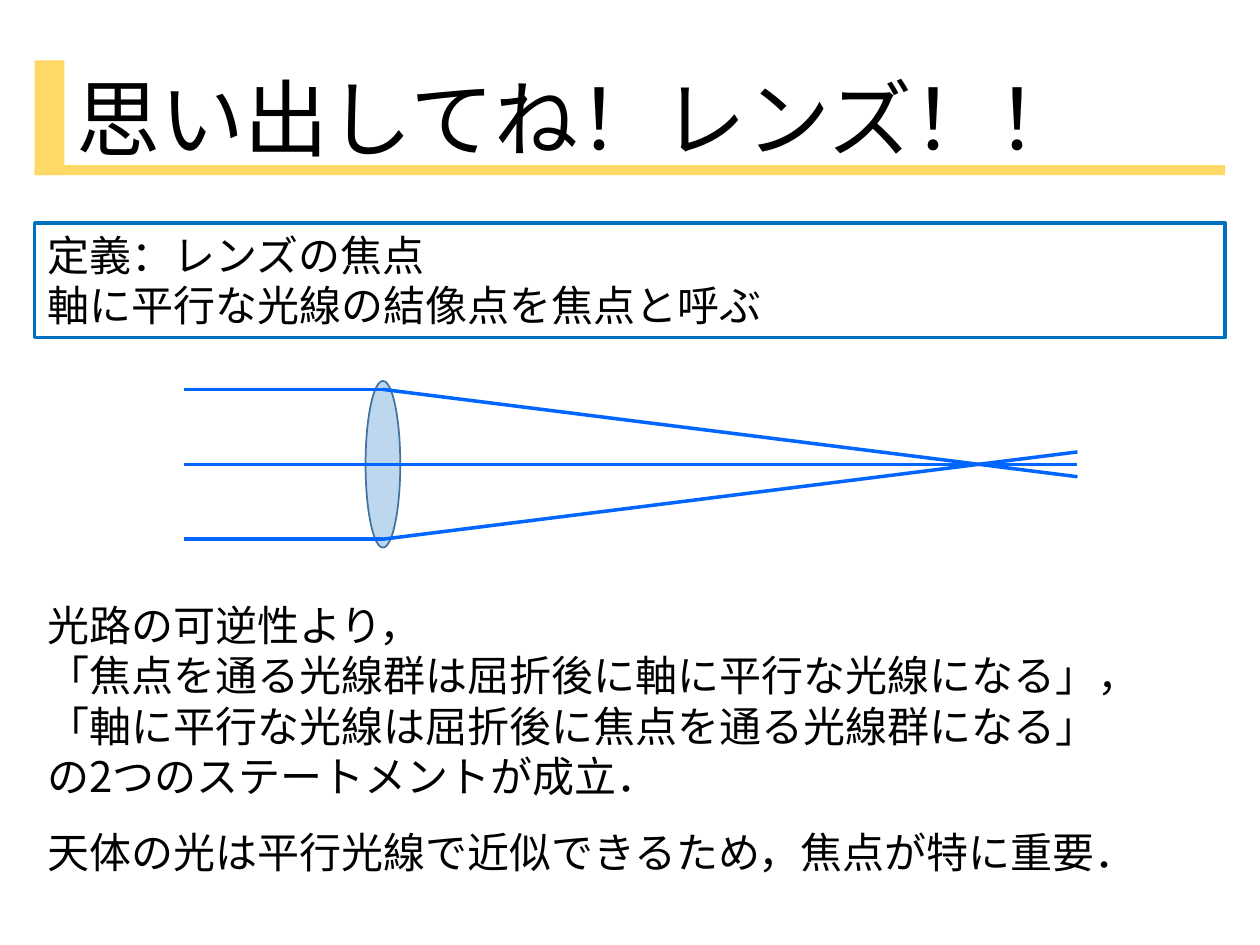
from dataclasses import dataclass

from lxml import etree
from pptx import Presentation
from pptx.dml.color import RGBColor
from pptx.enum.shapes import MSO_CONNECTOR, MSO_SHAPE
from pptx.enum.text import MSO_ANCHOR, PP_ALIGN
from pptx.oxml.ns import qn
from pptx.util import Cm, Pt

RECT = MSO_SHAPE.RECTANGLE
OVAL = MSO_SHAPE.OVAL
STRAIGHT = MSO_CONNECTOR.STRAIGHT
LEFT = PP_ALIGN.LEFT
TOP = MSO_ANCHOR.TOP


@dataclass(frozen=True)
class Theme:
    font: str = "Noto Sans CJK JP"
    ink: str = "000000"
    gold: str = "FFD966"
    frame: str = "0070C0"
    glass: str = "BDD7EE"
    rim: str = "43739E"
    ray: str = "0066FF"
    title: int = 48
    body: int = 24


class Page:
    def __init__(self, slide, theme):
        self.shapes = slide.shapes
        self.theme = theme

    def fill_text(self, frame, lines, size, wrap):
        frame.word_wrap = wrap
        frame.vertical_anchor = TOP
        for i, line in enumerate(lines):
            para = frame.paragraphs[0] if i == 0 else frame.add_paragraph()
            para.text = line
            para.alignment = LEFT
            font = para.font
            font.size = Pt(size)
            font.color.rgb = RGBColor.from_string(self.theme.ink)
            font.name = self.theme.font
            props = para._p.pPr.find(qn("a:defRPr"))
            etree.SubElement(props, qn("a:ea"), typeface=self.theme.font)

    def text(self, box, lines, size):
        item = self.shapes.add_textbox(*map(Cm, box))
        self.fill_text(item.text_frame, lines, size, False)

    def shape(self, kind, box, fill=None, line=None, width=1):
        item = self.shapes.add_shape(kind, *map(Cm, box))
        item.shadow.inherit = False
        if fill:
            item.fill.solid()
            item.fill.fore_color.rgb = RGBColor.from_string(fill)
        else:
            item.fill.background()
        if line:
            item.line.color.rgb = RGBColor.from_string(line)
            item.line.width = Pt(width)
        else:
            item.line.fill.background()
        return item

    def panel(self, box, lines):
        item = self.shape(RECT, box, line=self.theme.frame, width=2)
        self.fill_text(item.text_frame, lines, self.theme.body, True)

    def ray(self, start, end):
        item = self.shapes.add_connector(STRAIGHT, *map(Cm, start + end))
        item.line.color.rgb = RGBColor.from_string(self.theme.ray)
        item.line.width = Pt(2)
        etree.SubElement(item._element.spPr, qn("a:effectLst"))


def main():
    deck = Presentation()
    deck.slide_width, deck.slide_height = Cm(25.4), Cm(19.05)
    theme = Theme()
    page = Page(deck.slides.add_slide(deck.slide_layouts[6]), theme)
    left, width, high = 0.7, 24, 2.31

    page.text((1.3, 1.22, 21.03, high), ["思い出してね！レンズ！！"], theme.title)
    page.shape(RECT, (left, 1.22, 0.6, high), theme.gold)
    page.shape(RECT, (left, 3.33, width, 0.2), theme.gold)

    page.panel((left, 4.5, width, high), [
        "定義：レンズの焦点",
        "軸に平行な光線の結像点を焦点と呼ぶ",
    ])
    page.text((left, 11.96, 22.73, 4.37), [
        "光路の可逆性より，",
        "「焦点を通る光線群は屈折後に軸に平行な光線になる」，",
        "「軸に平行な光線は屈折後に焦点を通る光線群になる」",
        "の2つのステートメントが成立．",
    ], theme.body)
    page.text((left, 16.54, 22.73, 1.27),
              ["天体の光は平行光線で近似できるため，焦点が特に重要．"], theme.body)

    lens, axis = 7.72, 9.36
    start, end = 3.7, 21.72
    page.shape(OVAL, (lens - 0.35, axis - 1.68, 0.7, 3.36), theme.glass, theme.rim)
    for side in (-1, 1):
        bend = (lens, axis + side * 1.51)
        page.ray((start, bend[1]), bend)
        page.ray(bend, (end, axis - side * 0.25))
    page.ray((start, axis), (end, axis))

    deck.save("out.pptx")


if __name__ == "__main__":
    main()
